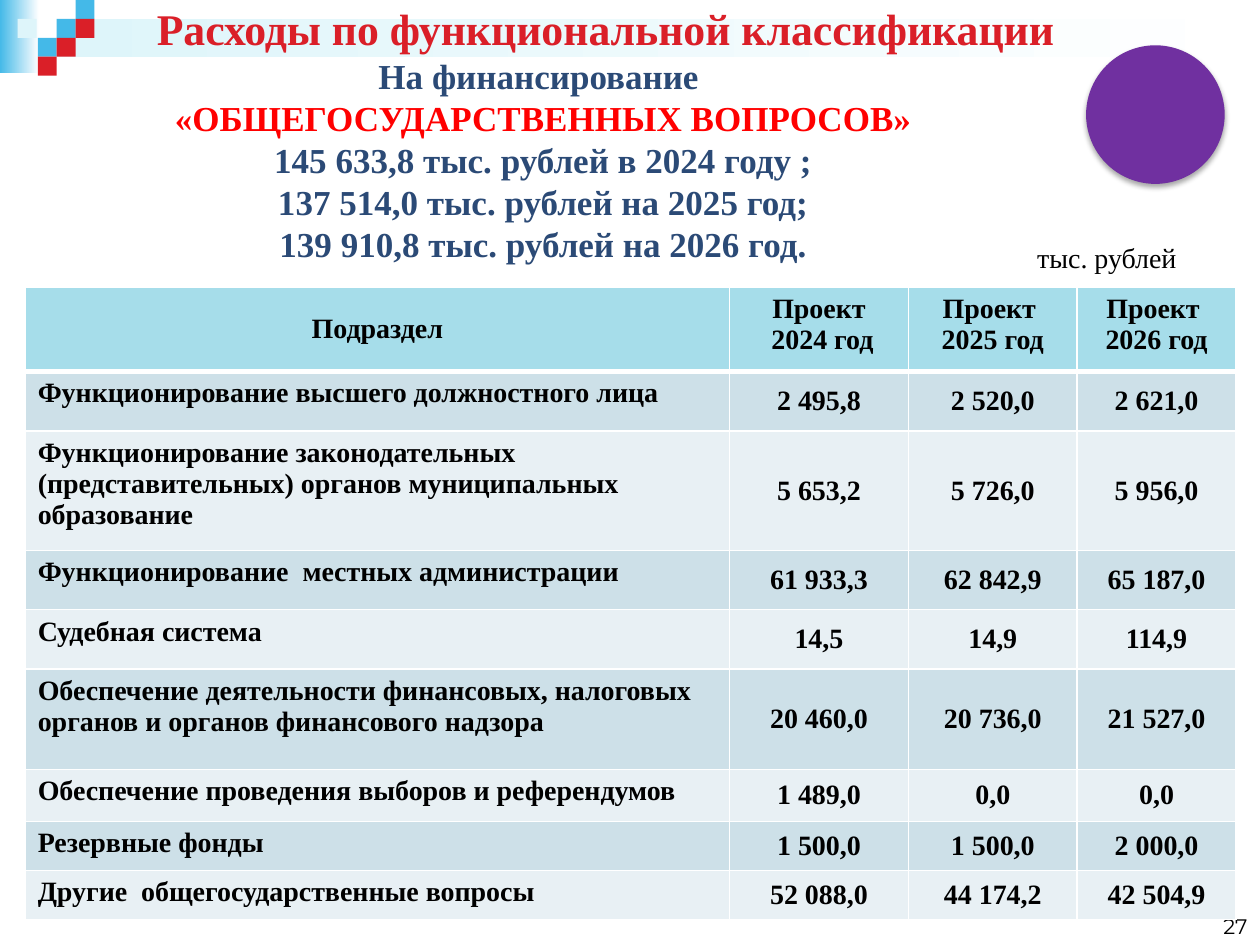
from dataclasses import dataclass

from lxml.etree import SubElement
from pptx import Presentation
from pptx.dml.color import RGBColor
from pptx.enum.shapes import MSO_SHAPE
from pptx.enum.text import MSO_ANCHOR, PP_ALIGN
from pptx.oxml import parse_xml
from pptx.oxml.ns import nsdecls, qn
from pptx.util import Pt

PX = 9144  # 100 px to the inch
SERIF = "Times New Roman"
COLORS = {
    "white": "FFFFFF", "black": "000000", "sky": "44B9E8", "pale": "DEF5FA",
    "crimson": "DA1F28", "navy": "2B4A76", "red": "FF0000", "purple": "7030A0",
    "head": "A6DDEA", "odd": "CDE0E8", "even": "E8F0F4",
}


@dataclass
class Box:
    x: int
    y: int
    w: int
    h: int

    def emu(self) -> tuple:
        return self.x * PX, self.y * PX, self.w * PX, self.h * PX


@dataclass
class Block:
    box: Box
    color: str
    fade: bool = False


def rgb(name: str) -> RGBColor:
    return RGBColor.from_string(COLORS[name])


def write(tf, text: str, size=16, color="black", bold=False, font=SERIF,
          align=PP_ALIGN.CENTER, anchor=MSO_ANCHOR.TOP, spacing=None,
          line_colors=None) -> None:
    """Write one paragraph per line of text; line_colors overrides by line."""
    tf.word_wrap = True
    tf.vertical_anchor = anchor
    for i, line in enumerate(text.split("\n")):
        p = tf.paragraphs[0] if i == 0 else tf.add_paragraph()
        p.alignment = align
        if spacing:
            p.line_spacing = Pt(spacing)
        r = p.add_run()
        r.text = line
        r.font.size, r.font.bold, r.font.name = Pt(size), bold, font
        r.font.color.rgb = rgb((line_colors or {}).get(i, color))


def add_text(s, box: Box, text: str, **fmt) -> None:
    write(s.shapes.add_textbox(*box.emu()).text_frame, text, **fmt)


def add_block(s, block: Block, kind=MSO_SHAPE.RECTANGLE):
    sp = s.shapes.add_shape(kind, *block.box.emu())
    sp.shadow.inherit = False
    sp.line.fill.background()
    if block.fade:
        sp.fill.gradient()
        sp.fill.gradient_angle = 0
        for stop, color, pos in zip(sp.fill.gradient_stops, (block.color, "white"), (0, 1)):
            stop.color.rgb = rgb(color)
            stop.position = pos
    else:
        sp.fill.solid()
        sp.fill.fore_color.rgb = rgb(block.color)
    return sp


def add_shadow(sp) -> None:
    effects = sp._element.spPr.find(qn("a:effectLst"))
    effects.append(parse_xml(
        f'<a:outerShdw {nsdecls("a")} blurRad="{Pt(3.1)}" dist="{Pt(1.8)}" dir="5400000" '
        'rotWithShape="0"><a:srgbClr val="000000"><a:alpha val="35000"/></a:srgbClr>'
        '</a:outerShdw>'))


def set_borders(cell, top: int, bottom: int) -> None:
    tc_pr = cell._tc.get_or_add_tcPr()
    sides = {"lnL": 1, "lnR": 1, "lnT": top, "lnB": bottom}
    for i, (side, width) in enumerate(sides.items()):
        ln = SubElement(tc_pr, qn(f"a:{side}"), w=str(Pt(width)))
        fill = SubElement(ln, qn("a:solidFill"))
        SubElement(fill, qn("a:srgbClr"), val=COLORS["white"])
        tc_pr.insert(i, ln)


def add_budget_table(s, x: int, y: int, cols: list, heights: list, rows: list) -> None:
    box = Box(x, y, sum(cols), sum(heights))
    table = s.shapes.add_table(len(rows), len(cols), *box.emu()).table
    for col, width in zip(table.columns, cols):
        col.width = width * PX
    for i, (row, height) in enumerate(zip(rows, heights)):
        table.rows[i].height = height * PX
        band = "head" if i == 0 else "odd" if i % 2 else "even"
        for j, text in enumerate(row):
            cell = table.cell(i, j)
            cell.fill.solid()
            cell.fill.fore_color.rgb = rgb(band)
            set_borders(cell, top=3 if i == 1 else 1, bottom=3 if i == 0 else 1)
            # Only the corner heading and the figures are centred vertically
            middle = (i == 0) == (j == 0)
            anchor = MSO_ANCHOR.MIDDLE if middle else MSO_ANCHOR.TOP
            write(cell.text_frame, text, bold=True,
                  align=PP_ALIGN.LEFT if i and j == 0 else PP_ALIGN.CENTER)
            cell.vertical_anchor = anchor


TILE = 15
TILES = [(45, 15, "sky"), (60, 0, "sky"), (60, 15, "crimson"), (30, 30, "sky"),
         (14, 15, "pale"), (45, 30, "crimson"), (30, 45, "crimson")]
HEADER = [Block(Box(0, 0, 31, 58), "sky", fade=True),
          Block(Box(45, 15, 955, 30), "pale", fade=True)]
HEADER += [Block(Box(x, y, TILE, TILE), color) for x, y, color in TILES]

SUMMARY = """На финансирование 
«ОБЩЕГОСУДАРСТВЕННЫХ ВОПРОСОВ»
145 633,8 тыс. рублей в 2024 году ;
137 514,0 тыс. рублей на 2025 год;
139 910,8 тыс. рублей на 2026 год."""

COLS = [559, 142, 134, 126]
HEIGHTS = [67, 47, 95, 47, 47, 80, 41, 39, 39]
ROWS = [
    ("Подраздел", "Проект\n 2024 год", "Проект \n2025 год", "Проект \n2026 год"),
    ("Функционирование высшего должностного лица", "2 495,8", "2 520,0", "2 621,0"),
    ("Функционирование законодательных (представительных) органов муниципальных образование",
     "5 653,2", "5 726,0", "5 956,0"),
    ("Функционирование  местных администрации", "61 933,3", "62 842,9", "65 187,0"),
    ("Судебная система", "14,5", "14,9", "114,9"),
    ("Обеспечение деятельности финансовых, налоговых органов и органов финансового надзора",
     "20 460,0", "20 736,0", "21 527,0"),
    ("Обеспечение проведения выборов и референдумов", "1 489,0", "0,0", "0,0"),
    ("Резервные фонды", "1 500,0", "1 500,0", "2 000,0"),
    ("Другие  общегосударственные вопросы", "52 088,0", "44 174,2", "42 504,9"),
]


def main() -> None:
    prs = Presentation()
    prs.slide_width, prs.slide_height = 1000 * PX, 750 * PX
    s = prs.slides.add_slide(prs.slide_layouts[6])

    # Header decoration
    for block in HEADER:
        add_block(s, block)

    # Page number and title
    add_text(s, Box(767, 700, 233, 50), "27", size=12, font="Montserrat",
             align=PP_ALIGN.RIGHT, anchor=MSO_ANCHOR.BOTTOM)
    add_text(s, Box(83, 0, 795, 44), "Расходы по функциональной классификации",
             size=25, color="crimson", bold=True, anchor=MSO_ANCHOR.MIDDLE)

    # Spending by subsection
    add_budget_table(s, 20, 228, COLS, HEIGHTS, ROWS)

    # Round emblem
    add_shadow(add_block(s, Block(Box(862, 36, 110, 110), "purple"), MSO_SHAPE.OVAL))

    # Unit and summary
    add_text(s, Box(776, 186, 205, 37), "тыс. рублей")
    add_text(s, Box(0, 44, 862, 165), SUMMARY, size=20, color="navy", bold=True,
             anchor=MSO_ANCHOR.MIDDLE, spacing=24, line_colors={1: "red"})

    prs.save("out.pptx")


if __name__ == "__main__":
    main()
